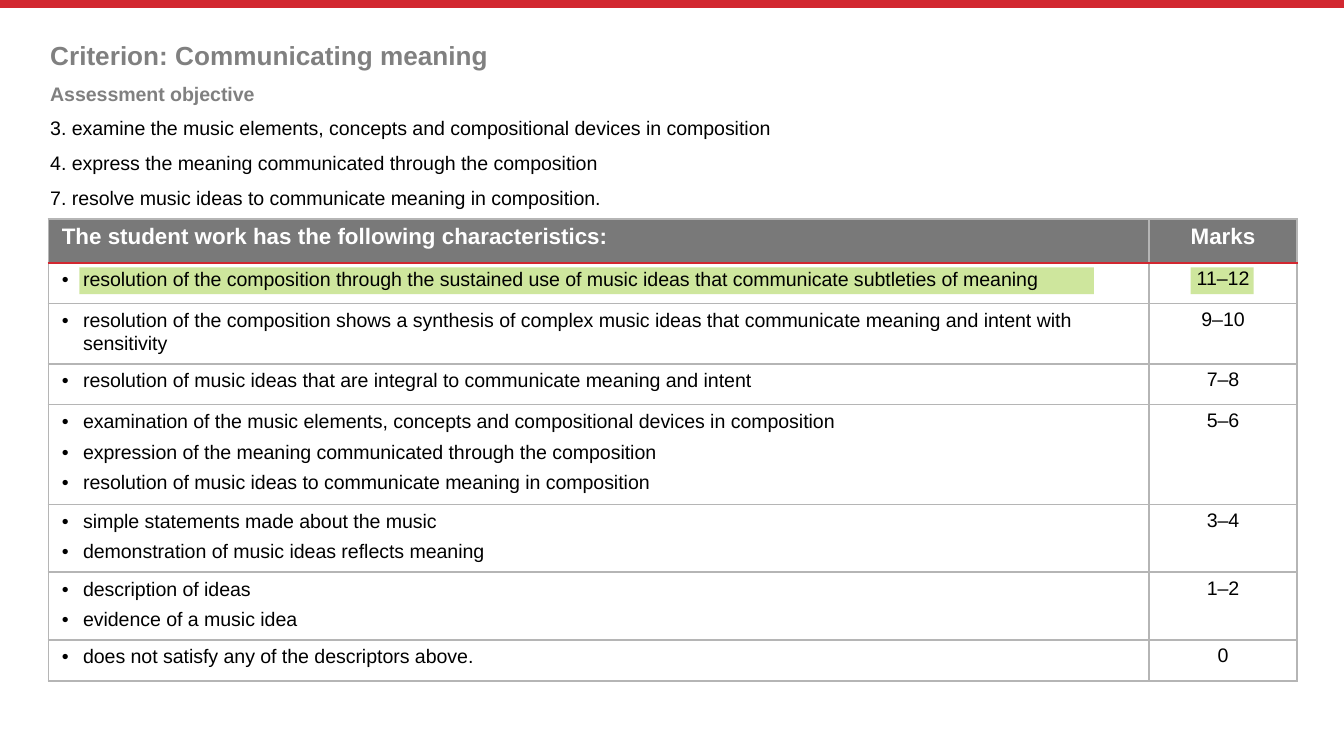
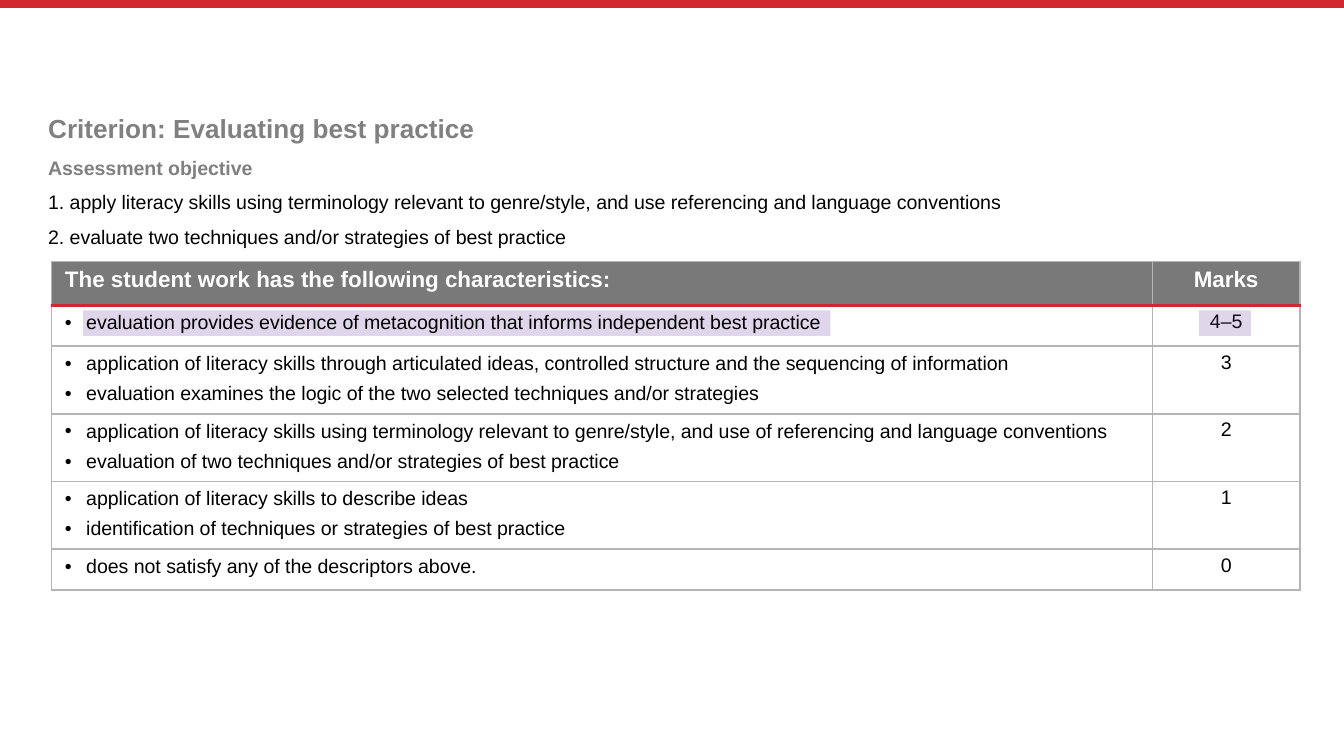
from lxml import etree
from pptx import Presentation
from pptx.dml.color import RGBColor
from pptx.enum import shapes, text
from pptx.oxml import ns
from pptx.util import Pt

RED, GREY, RULE, HEADER = "D22730", "808080", "B5B5B5", "797979"
BLACK, WHITE = "000000", "FFFFFF"
CENTRE = {"alignment": text.PP_ALIGN.CENTER}
SPACED = {"space_before": Pt(6)}
BULLETED = {"line_spacing": 1.05, "space_before": Pt(2), "space_after": Pt(2)}
TITLE = {"size": Pt(14), "bold": True, "color": GREY}
SUBTITLE = {"size": Pt(10.5), "bold": True, "color": GREY}
BODY = {"size": Pt(10.5), "bold": False, "color": BLACK}
HEADING = {"size": Pt(12), "bold": True, "color": WHITE}
COLUMNS = [589.7, 79.2]
INDENT = Pt(11.4)
HEADINGS = (["The student work has the following characteristics:"], "Marks")
LAST_ROW = (["does not satisfy any of the descriptors above."], "0")

sheets = [
    {
        "title": "Criterion: Communicating meaning",
        "objectives": [
            "3. examine the music elements, concepts and compositional devices in composition",
            "4. express the meaning communicated through the composition",
            "7. resolve music ideas to communicate meaning in composition.",
        ],
        "text_at": (26.9, 20.9, 668.9, 96.5),
        "table_at": (25.9, 117.4),
        "behind": [
            (637.9, 143.3, 33.8, 14.4, "99CC33", 48),
            (42.5, 143.3, 543.6, 14.4, "99CC33", 48),
        ],
        "front": [],
        "rows": [
            (["resolution of the composition through the sustained use of music ideas that communicate subtleties of meaning"], "11–12"),
            (["resolution of the composition shows a synthesis of complex music ideas that communicate meaning and intent with sensitivity"], "9–10"),
            (["resolution of music ideas that are integral to communicate meaning and intent"], "7–8"),
            (["examination of the music elements, concepts and compositional devices in composition",
              "expression of the meaning communicated through the composition",
              "resolution of music ideas to communicate meaning in composition"], "5–6"),
            (["simple statements made about the music",
              "demonstration of music ideas reflects meaning"], "3–4"),
            (["description of ideas", "evidence of a music idea"], "1–2"),
        ],
    },
    {
        "title": "Criterion: Evaluating best practice",
        "objectives": [
            "1. apply literacy skills using terminology relevant to genre/style, and use referencing and language conventions",
            "2. evaluate two techniques and/or strategies of best practice",
        ],
        "text_at": (25.8, 60.5, 668.9, 79.2),
        "table_at": (27.6, 140.2),
        "behind": [(44.6, 166.3, 400.3, 13.7, "E0D6EB", 100)],
        "front": [(642.2, 166.3, 28.1, 13.7, "663399", 20)],
        "rows": [
            (["evaluation provides evidence of metacognition that informs independent best practice"], "4–5"),
            (["application of literacy skills through articulated ideas, controlled structure and the sequencing of information",
              "evaluation examines the logic of the two selected techniques and/or strategies"], "3"),
            (["application of literacy skills using terminology relevant to genre/style, and use of referencing and language conventions",
              "evaluation of two techniques and/or strategies of best practice"], "2"),
            (["application of literacy skills to describe ideas",
              "identification of techniques or strategies of best practice"], "1"),
        ],
    },
]


def colour(code):
    return RGBColor.from_string(code)


def write(frame, lines, layout, bullet=False):
    for number, (words, look) in enumerate(lines):
        para = frame.paragraphs[0] if number == 0 else frame.add_paragraph()
        if bullet:
            props = para._p.get_or_add_pPr()
            props.set("marL", str(INDENT))
            props.set("indent", str(-INDENT))
            etree.SubElement(props, ns.qn("a:buFont"), typeface="Arial")
            etree.SubElement(props, ns.qn("a:buChar"), char="•")
            tabs = etree.SubElement(props, ns.qn("a:tabLst"))
            etree.SubElement(tabs, ns.qn("a:tab"), pos=str(INDENT), algn="l")
        for name, value in layout.items():
            if number or name != "space_before":
                setattr(para, name, value)
        span = para.add_run()
        span.text = words
        span.font.name = "Arial"
        for name, value in look.items():
            if name == "color":
                span.font.color.rgb = colour(value)
            else:
                setattr(span.font, name, value)


deck = Presentation()
deck.slide_width, deck.slide_height = Pt(720), Pt(405)

for sheet in sheets:
    page = deck.slides.add_slide(deck.slide_layouts[6])
    band = page.shapes.add_connector(shapes.MSO_CONNECTOR.STRAIGHT, Pt(0), Pt(2.1), Pt(720), Pt(2.1))
    band.line.color.rgb = colour(RED)
    band.line.width = Pt(4.2)
    etree.SubElement(band.element.spPr, ns.qn("a:effectLst"))

    for layer in ("behind", "front"):
        for *place, tint, opacity in sheet[layer]:
            marker = page.shapes.add_shape(shapes.MSO_SHAPE.RECTANGLE, *map(Pt, place))
            marker.shadow.inherit = False
            marker.line.fill.background()
            marker.fill.solid()
            marker.fill.fore_color.rgb = colour(tint)
            if opacity < 100:
                shade = marker.element.spPr.find(".//" + ns.qn("a:srgbClr"))
                etree.SubElement(shade, ns.qn("a:alpha"), val=str(opacity * 1000))
        if layer == "front":
            continue

        box = page.shapes.add_textbox(*map(Pt, sheet["text_at"]))
        frame = box.text_frame
        frame.word_wrap = True
        for side in ("left", "top", "right", "bottom"):
            setattr(frame, "margin_" + side, 0)
        lines = [(sheet["title"], TITLE), ("Assessment objective", SUBTITLE)]
        write(frame, lines + [(words, BODY) for words in sheet["objectives"]], SPACED)

        rows = [HEADINGS, *sheet["rows"], LAST_ROW]
        left, top = sheet["table_at"]
        table = page.shapes.add_table(
            len(rows), 2, Pt(left), Pt(top), Pt(sum(COLUMNS)), Pt(22 * len(rows))).table
        table.horz_banding = False
        table.first_row = False
        for column, width in zip(table.columns, COLUMNS):
            column.width = Pt(width)
        for r, (descriptors, marks) in enumerate(rows):
            table.rows[r].height = Pt(max(21.9, 1 + 16.4 * len(descriptors)) if r else 23.4)
            look = BODY if r else HEADING
            for c, words in enumerate((descriptors, [marks])):
                cell = table.cell(r, c)
                cell.margin_left = cell.margin_right = Pt(7.2)
                cell.margin_top = cell.margin_bottom = Pt(2.9)
                layout = CENTRE if c else BULLETED if r else {}
                write(cell.text_frame, [(line, look) for line in words], layout, bool(r and not c))
                props = cell._tc.get_or_add_tcPr()
                for side in "LRTB":
                    accent = (r, side) in ((0, "B"), (1, "T"))
                    edge = etree.SubElement(
                        props, ns.qn("a:ln" + side), w=str(Pt(1.5 if accent else 1)))
                    paint = etree.SubElement(edge, ns.qn("a:solidFill"))
                    etree.SubElement(paint, ns.qn("a:srgbClr"), val=RED if accent else RULE)
                if r:
                    cell.fill.background()
                else:
                    cell.fill.solid()
                    cell.fill.fore_color.rgb = colour(HEADER)

deck.save("out.pptx")
